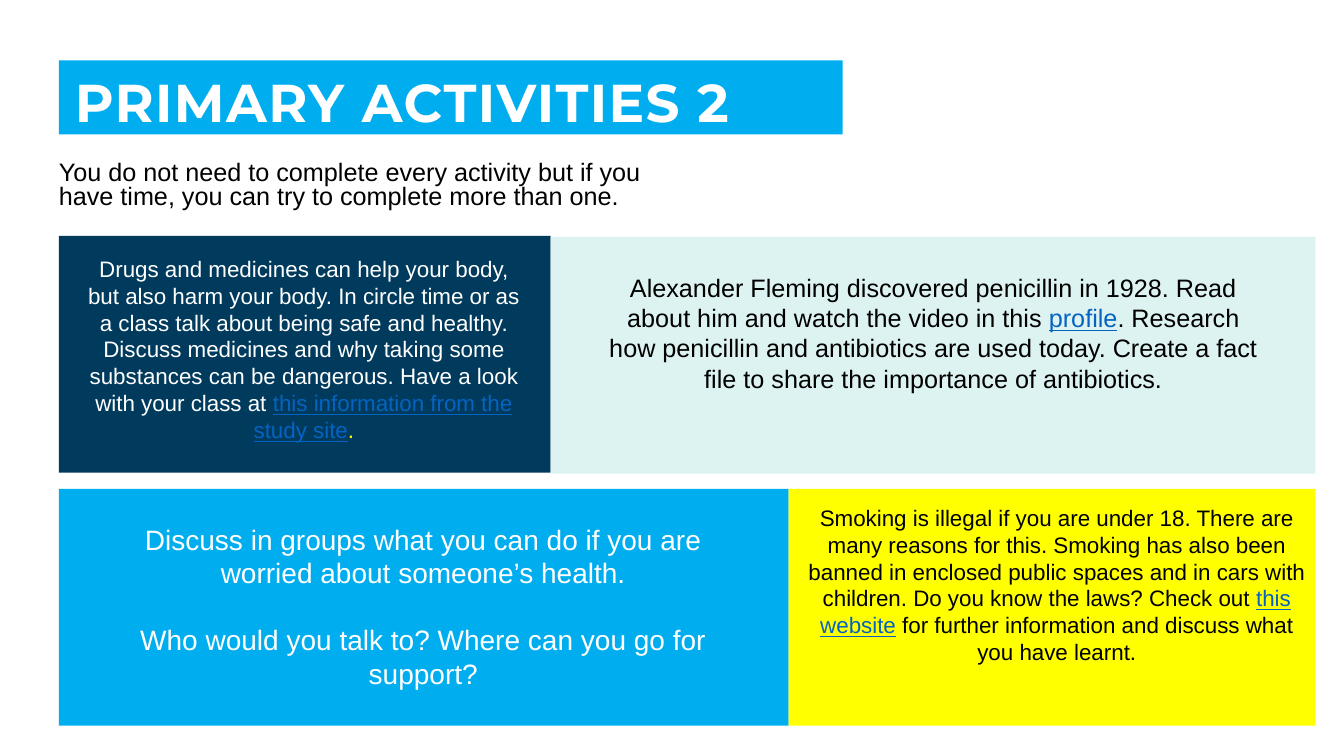
"""Build the slide of primary classroom activities on health."""
from pptx import Presentation
from pptx.dml.color import RGBColor as RGB
from pptx.enum.shapes import MSO_SHAPE as Shape
from pptx.enum.text import MSO_ANCHOR as Anchor, PP_ALIGN as Align
from pptx.util import Pt

WHITE = RGB(0xFF, 0xFF, 0xFF)
BLACK = RGB(0, 0, 0)
SKY = RGB(0x00, 0xAE, 0xEF)
NAVY = RGB(0x00, 0x3B, 0x5E)
MINT = RGB(0xDD, 0xF3, 0xF1)
YELLOW = RGB(0xFF, 0xFF, 0x00)
LINK = RGB(0x05, 0x63, 0xC1)

deck = Presentation()
deck.slide_width, deck.slide_height = Pt(960), Pt(540)
slide = deck.slides.add_slide(deck.slide_layouts[6])
shapes = slide.shapes


def add_rect(area, fill):
    rect = shapes.add_shape(Shape.RECTANGLE, *map(Pt, area))
    rect.shadow.inherit = False
    rect.fill.solid()
    rect.fill.fore_color.rgb = fill
    rect.line.fill.background()
    return rect


def add_run(para, text, color, **style):
    run = para.add_run()
    run.text = text
    run.font.color.rgb = color
    for name, value in style.items():
        setattr(run.font, name, value)
    return run


title = add_rect((42, 43.2, 560, 52.8), SKY)
frame = title.text_frame
margins = {"margin_left": 11.5, "margin_top": 11.5, "margin_right": 8.6, "margin_bottom": 0}
for name, value in margins.items():
    setattr(frame, name, Pt(value))
frame.word_wrap = True
frame.vertical_anchor = Anchor.MIDDLE
para = frame.paragraphs[0]
para.alignment = Align.LEFT
para.line_spacing = 0.9
run = add_run(para, "PRIMARY ACTIVITIES 2", WHITE, name="Montserrat", size=Pt(38), bold=True)
run.font._element.set("spc", "100")

intro = shapes.add_textbox(Pt(42), Pt(112.3), Pt(447), Pt(44.6))
frame = intro.text_frame
frame.word_wrap = True
frame.margin_left = 0
para = frame.paragraphs[0]
para.line_spacing = 0.8
add_run(
    para,
    "You do not need to complete every activity but if you have time, "
    "you can try to complete more than one.",
    BLACK, name="Arial", size=Pt(18),
)

cards = [
    ((42, 168.5, 351.4, 169.2), NAVY, (52.6, 178.6, 329, 143.3), 16, [[
        ("Drugs and medicines can help your body, but also harm your body. "
         "In circle time or as a class talk about being safe and healthy. "
         "Discuss medicines and why taking some substances can be dangerous. "
         "Have a look with your class at ", WHITE),
        ("this information from the study site", LINK),
        (".", YELLOW),
    ]]),
    ((42, 349.2, 521.3, 169.2), SKY, (80.6, 369.4, 443.5, 128.2), 20, [
        [("Discuss in groups what you can do if you are worried about someone’s health.", WHITE)],
        [("Who would you talk to? Where can you go for support?", WHITE)],
    ]),
    ((393.4, 169.2, 546.2, 169.2), MINT, (424, 190.8, 485.3, 94.3), 18, [[
        ("Alexander Fleming discovered penicillin in 1928. "
         "Read about him and watch the video in this ", BLACK),
        ("profile", LINK),
        (". Research how penicillin and antibiotics are used today. "
         "Create a fact file to share the importance of antibiotics.", BLACK),
    ]]),
    ((563.3, 349.2, 376.3, 169.2), YELLOW, (570.2, 356.4, 369.4, 123.8), 16, [[
        ("Smoking is illegal if you are under 18. There are many reasons for this. "
         "Smoking has also been banned in enclosed public spaces and in cars with children. "
         "Do you know the laws? Check out ", BLACK),
        ("this website", LINK),
        (" for further information and discuss what you have learnt.", BLACK),
    ]]),
]

for panel, fill, area, size, paras in cards:
    add_rect(panel, fill)
    frame = shapes.add_textbox(*map(Pt, area)).text_frame
    frame.word_wrap = True
    for i, parts in enumerate(paras):
        para = frame.add_paragraph() if i else frame.paragraphs[0]
        para.alignment = Align.CENTER
        if i:
            para.space_before = Pt(24)
        for text, color in parts:
            add_run(para, text, color, name="Arial", size=Pt(size), underline=color == LINK)

deck.save("out.pptx")
